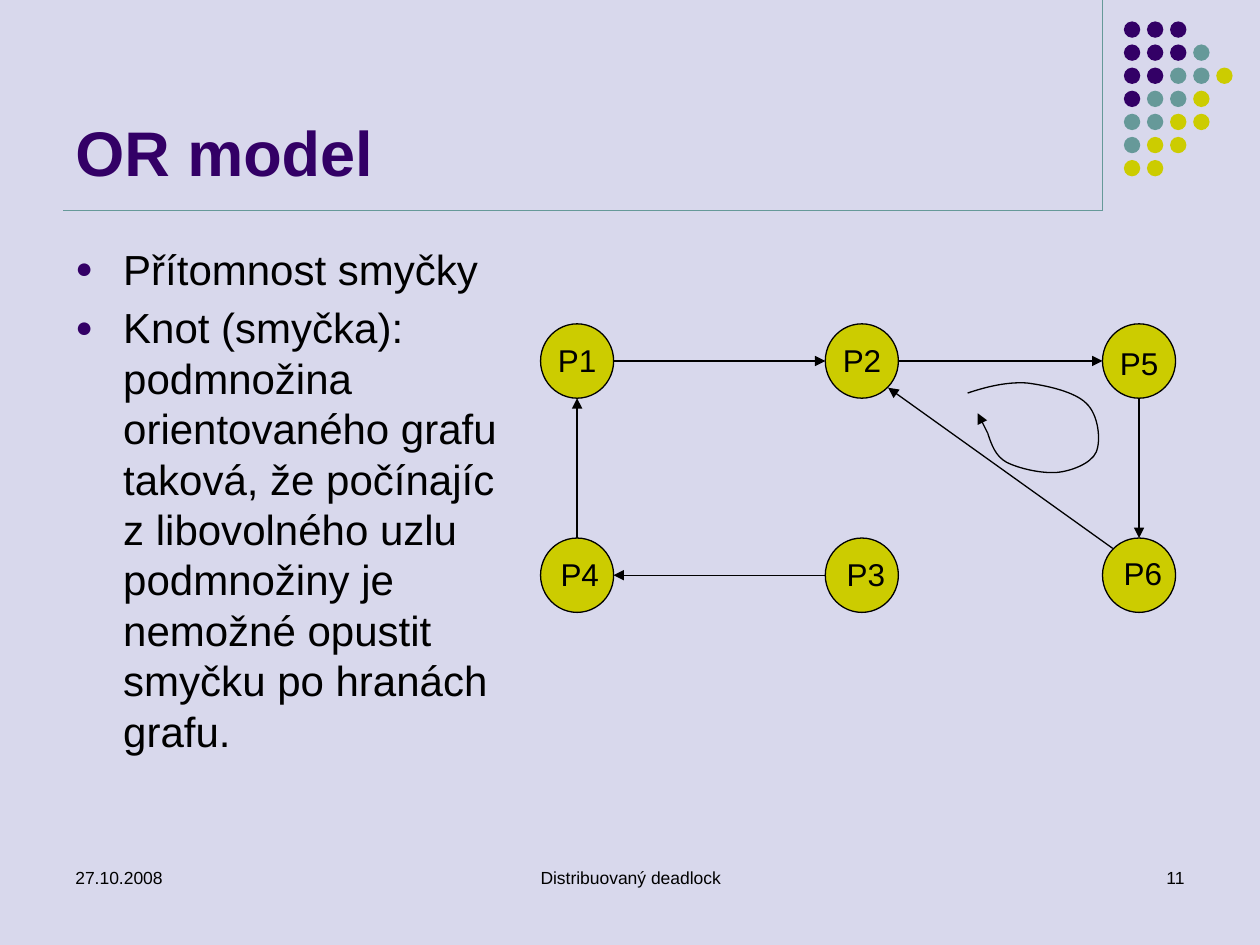
import pptx
import pptx.util
import pptx.dml.color
import pptx.enum.shapes
import pptx.enum.text
import pptx.oxml
import pptx.oxml.ns

Inch, Pt = pptx.util.Inches, pptx.util.Pt
Kind = pptx.enum.shapes.MSO_SHAPE
Align = pptx.enum.text.PP_ALIGN
Anchor = pptx.enum.text.MSO_ANCHOR
qn = pptx.oxml.ns.qn

WIDE, HIGH = 10, 7.5
COLORS = {"back": "D8D8EC", "p": "330066", "t": "669999", "y": "CCCC00", "ink": "000000"}
FONT = "Arial"

DOTS = ["ppp", "pppt", "pptty", "ptty", "ttyy", "tyy", "yy"]
RULES = [((8.75, 0), (8.75, 1.67)), ((0.5, 1.67), (8.75, 1.67))]
FOOTER = [
    ("27.10.2008", (0.5, 6.83, 2.33, 0.5), Align.LEFT),
    ("Distribuovaný deadlock", (3.42, 6.83, 3.17, 0.5), Align.CENTER),
    ("11", (7.17, 6.83, 2.33, 0.5), Align.RIGHT),
]
TITLE = "OR model"
BODY = [
    "Přítomnost smyčky",
    "Knot (smyčka): podmnožina orientovaného grafu taková, že počínajíc "
    "z libovolného uzlu podmnožiny je nemožné opustit smyčku po hranách grafu.",
]

COLS, ROWS = (4.29, 6.55, 8.75), (2.57, 4.27)
NODE = (0.58, 0.59)
NODES = {
    "P1": (0, 0, 0.04, 0.09),
    "P4": (0, 1, 0.06, 0.09),
    "P3": (1, 1, 0.07, 0.09),
    "P6": (2, 1, 0.07, 0.08),
    "P5": (2, 0, 0.04, 0.11),
    "P2": (1, 0, 0.04, 0.09),
}
SIDES = {"n": (0.5, 0), "s": (0.5, 1), "w": (0, 0.5), "e": (1, 0.5),
         "nw": (0.14, 0.14), "se": (0.86, 0.86)}
LINKS = [
    ("P1", "e", "P2", "w"),
    ("P3", "w", "P4", "e"),
    ("P4", "n", "P1", "s"),
    ("P5", "s", "P6", "n"),
    ("P2", "e", "P5", "w"),
    ("P6", "nw", "P2", "se"),
]
LOOP = [
    (7.68, 3.12),
    (7.83, 3.07), (7.99, 3.03), (8.15, 3.04),
    (8.31, 3.06), (8.53, 3.11), (8.62, 3.2),
    (8.72, 3.29), (8.74, 3.5), (8.7, 3.59),
    (8.66, 3.68), (8.5, 3.74), (8.39, 3.75),
    (8.27, 3.76), (8.09, 3.72), (7.99, 3.67),
    (7.9, 3.62), (7.87, 3.53), (7.84, 3.44),
]
LOOP_END = (7.76, 3.28)
GRAIN = 100


def tint(name):
    return pptx.dml.color.RGBColor.from_string(COLORS[name])


def stroke(line, color):
    line.color.rgb = tint(color)
    line.width = Pt(0.75)


def text(lines, box, size, color="ink", bold=False, wrap=True,
         align=Align.LEFT, anchor=Anchor.TOP):
    frame = slide.shapes.add_textbox(*map(Inch, box)).text_frame
    frame.word_wrap = wrap
    frame.vertical_anchor = anchor
    frame.text = "\n".join(lines)
    for para in frame.paragraphs:
        para.alignment = align
        font = para.runs[0].font
        style = {"name": FONT, "size": Pt(size), "bold": bold}
        for key, value in style.items():
            setattr(font, key, value)
        font.color.rgb = tint(color)
    return frame


def bullet(para):
    para.line_spacing = Pt(28.8)
    para.space_before = Pt(4.8)
    props = para._p.get_or_add_pPr()
    props.set("marL", str(Inch(0.38)))
    props.set("indent", str(-Inch(0.38)))
    color = pptx.oxml.ns.nsdecls("a")
    for xml in (
        f'<a:buClr {color}><a:srgbClr val="{COLORS["p"]}"/></a:buClr>',
        f'<a:buSzPct {color} val="70000"/>',
        f'<a:buFont {color} typeface="{FONT}"/>',
        f'<a:buChar {color} char="●"/>',
    ):
        props.append(pptx.oxml.parse_xml(xml))


def disc(box, fill):
    shape = slide.shapes.add_shape(Kind.OVAL, *map(Inch, box))
    shape.shadow.inherit = False
    shape.fill.solid()
    shape.fill.fore_color.rgb = tint(fill)
    shape.line.fill.background()
    return shape


def link(start, end, color="ink", arrow=True):
    line = slide.shapes.add_connector(
        pptx.enum.shapes.MSO_CONNECTOR.STRAIGHT, *map(Inch, start + end))
    stroke(line.line, color)
    props = line._element.spPr
    if arrow:
        tail = props.find(qn("a:ln")).makeelement(qn("a:tailEnd"), {"type": "triangle"})
        props.find(qn("a:ln")).append(tail)
    props.append(props.makeelement(qn("a:effectLst"), {}))


def curve(points):
    spots = [(round(x * GRAIN), round(y * GRAIN)) for x, y in points]
    pen = slide.shapes.build_freeform(*spots[0], scale=Inch(1) / GRAIN)
    pen.add_line_segments(spots[1:], close=False)
    shape = pen.convert_to_shape()
    shape.shadow.inherit = False
    shape.fill.background()
    stroke(shape.line, "ink")
    steps = list(shape._element.iter(qn("a:lnTo")))
    for i in range(0, len(steps), 3):
        bend = steps[i].makeelement(qn("a:cubicBezTo"), {})
        steps[i].addprevious(bend)
        for step in steps[i:i + 3]:
            bend.append(step[0])
            step.getparent().remove(step)


def corner(name):
    col, row = NODES[name][:2]
    return COLS[col], ROWS[row]


def port(name, side):
    return tuple(at + size * share
                 for at, size, share in zip(corner(name), NODE, SIDES[side]))


deck = pptx.Presentation()
deck.slide_width, deck.slide_height = Inch(WIDE), Inch(HIGH)
slide = deck.slides.add_slide(deck.slide_layouts[6])
slide.background.fill.solid()
slide.background.fill.fore_color.rgb = tint("back")

for start, end in RULES:
    link(start, end, "t", arrow=False)
pitch = 1.1 / 6
for row, marks in enumerate(DOTS):
    for col, mark in enumerate(marks):
        disc((8.92 + col * pitch, 0.17 + row * pitch, 0.13, 0.13), mark)

for words, box, align in FOOTER:
    text([words], box, 10, align=align)
text([TITLE], (0.5, 0.13, 8.25, 1.42), 36, "p", bold=True, anchor=Anchor.BOTTOM)
for para in text(BODY, (0.5, 1.88, 3.63, 4.86), 24).paragraphs:
    bullet(para)

for name, (col, row, dx, dy) in NODES.items():
    left, top = corner(name)
    stroke(disc((left, top, *NODE), "y").line, "ink")
    text([name], (left + dx, top + dy, 0.51, 0.4), 18, wrap=False)
for tail, out, head, into in LINKS:
    link(port(tail, out), port(head, into))
curve(LOOP)
link(LOOP[-1], LOOP_END)

deck.save("out.pptx")
